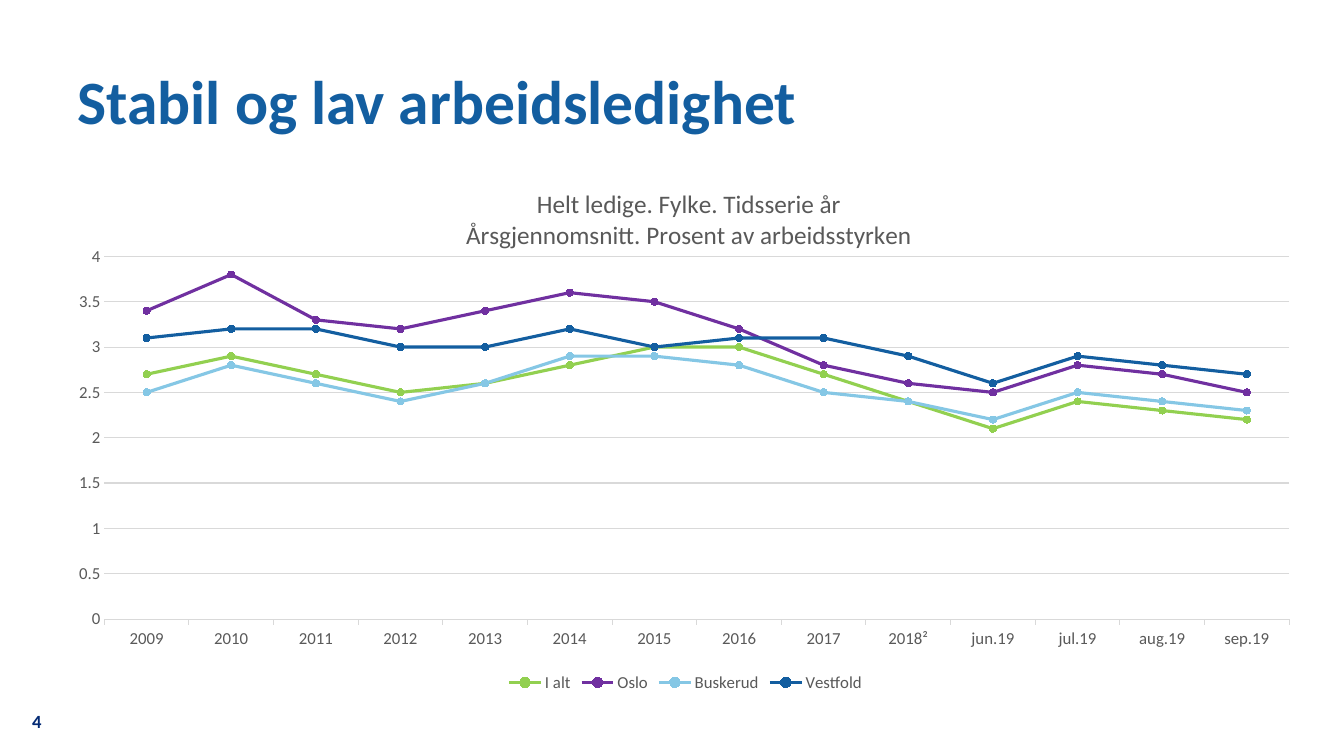
from lxml.etree import SubElement
from pptx import Presentation
from pptx.chart.data import CategoryChartData
from pptx.dml.color import RGBColor
from pptx.enum.chart import XL_CHART_TYPE, XL_LEGEND_POSITION, XL_MARKER_STYLE, XL_TICK_MARK
from pptx.enum.text import MSO_ANCHOR, MSO_AUTO_SIZE, PP_ALIGN
from pptx.oxml.ns import qn
from pptx.util import Pt


def style(font, size, color, bold=False):
    font.name = "Calibri"
    font.size = Pt(size)
    font.bold = bold
    font.color.rgb = RGBColor.from_string(color)


def place(parent, index, **settings):
    for old in parent.findall(qn("c:layout")):
        parent.remove(old)
    layout = parent.makeelement(qn("c:layout"))
    parent.insert(index, layout)
    manual = SubElement(layout, qn("c:manualLayout"))
    for tag, value in settings.items():
        SubElement(manual, qn(f"c:{tag}")).set("val", str(value))


GREY, PALE = "595959", "D9D9D9"
years = [str(year) for year in range(2009, 2018)] + ["2018²", "jun.19", "jul.19", "aug.19", "sep.19"]
counties = [
    ("I alt", "92D050", [2.7, 2.9, 2.7, 2.5, 2.6, 2.8, 3, 3, 2.7, 2.4, 2.1, 2.4, 2.3, 2.2]),
    ("Oslo", "7030A0", [3.4, 3.8, 3.3, 3.2, 3.4, 3.6, 3.5, 3.2, 2.8, 2.6, 2.5, 2.8, 2.7, 2.5]),
    ("Buskerud", "85C7E5", [2.5, 2.8, 2.6, 2.4, 2.6, 2.9, 2.9, 2.8, 2.5, 2.4, 2.2, 2.5, 2.4, 2.3]),
    ("Vestfold", "135EA0", [3.1, 3.2, 3.2, 3, 3, 3.2, 3, 3.1, 3.1, 2.9, 2.6, 2.9, 2.8, 2.7]),
]

prs = Presentation()
prs.slide_width, prs.slide_height = Pt(960), Pt(540)
slide = prs.slides.add_slide(prs.slide_layouts[5])

headline = slide.shapes.title
headline.left, headline.top, headline.width, headline.height = Pt(55.5), Pt(54), Pt(904.5), Pt(44)
page_number = slide.shapes.add_textbox(Pt(23), Pt(507), Pt(16), Pt(16))
for box, wording, size, color in [
    (headline, "Stabil og lav arbeidsledighet", 44, "135EA0"),
    (page_number, "4", 13.3, "032A74"),
]:
    frame = box.text_frame
    frame.text = wording
    frame.auto_size = MSO_AUTO_SIZE.NONE
    frame.margin_left = frame.margin_top = frame.margin_right = frame.margin_bottom = 0
    frame.paragraphs[0].alignment = PP_ALIGN.LEFT
    style(frame.paragraphs[0].runs[0].font, size, color, True)
headline.text_frame.vertical_anchor = MSO_ANCHOR.MIDDLE
headline.text_frame.paragraphs[0].line_spacing = 0.8
page_number.text_frame.word_wrap = False

unemployment = CategoryChartData()
unemployment.categories = years
for county, color, rates in counties:
    unemployment.add_series(county, rates)
chart = slide.shapes.add_chart(
    XL_CHART_TYPE.LINE_MARKERS, Pt(48), Pt(116.5), Pt(883.5), Pt(381), unemployment
).chart
style(chart.font, 10, "000000")

chart.has_title = True
caption = chart.chart_title
caption.text_frame.text = "Helt ledige. Fylke. Tidsserie år\nÅrsgjennomsnitt. Prosent av arbeidsstyrken"
for line in caption.text_frame.paragraphs:
    style(line.runs[0].font, 18, GREY)
place(caption.element, 1, xMode="edge", yMode="edge", x=0.32, y=0.04)
place(chart.element.chart.plotArea, 0, layoutTarget="inner", xMode="edge", yMode="edge",
      x=0.03, y=0.175, w=0.958, h=0.68)

chart.has_legend = True
chart.legend.position = XL_LEGEND_POSITION.BOTTOM
chart.legend.include_in_layout = False
style(chart.legend.font, 12, GREY)

period_axis, rate_axis = chart.category_axis, chart.value_axis
for axis in (period_axis, rate_axis):
    style(axis.tick_labels.font, 12, GREY)
    axis.minor_tick_mark = XL_TICK_MARK.NONE
period_axis.major_tick_mark = XL_TICK_MARK.OUTSIDE
rate_axis.major_tick_mark = XL_TICK_MARK.NONE
rate_axis.minimum_scale, rate_axis.maximum_scale, rate_axis.major_unit = 0, 4, 0.5
rate_axis.format.line.fill.background()
for rule in (period_axis.format.line, rate_axis.major_gridlines.format.line):
    rule.color.rgb = RGBColor.from_string(PALE)
    rule.width = Pt(0.75)

chart.plots[0].vary_by_categories = False
for series, (county, color, rates) in zip(chart.plots[0].series, counties):
    tint = RGBColor.from_string(color)
    series.smooth = False
    series.format.line.color.rgb = tint
    series.format.line.width = Pt(2.25)
    series.marker.style = XL_MARKER_STYLE.CIRCLE
    series.marker.size = 5
    series.marker.format.fill.solid()
    series.marker.format.fill.fore_color.rgb = tint
    series.marker.format.line.color.rgb = tint

prs.save("out.pptx")
